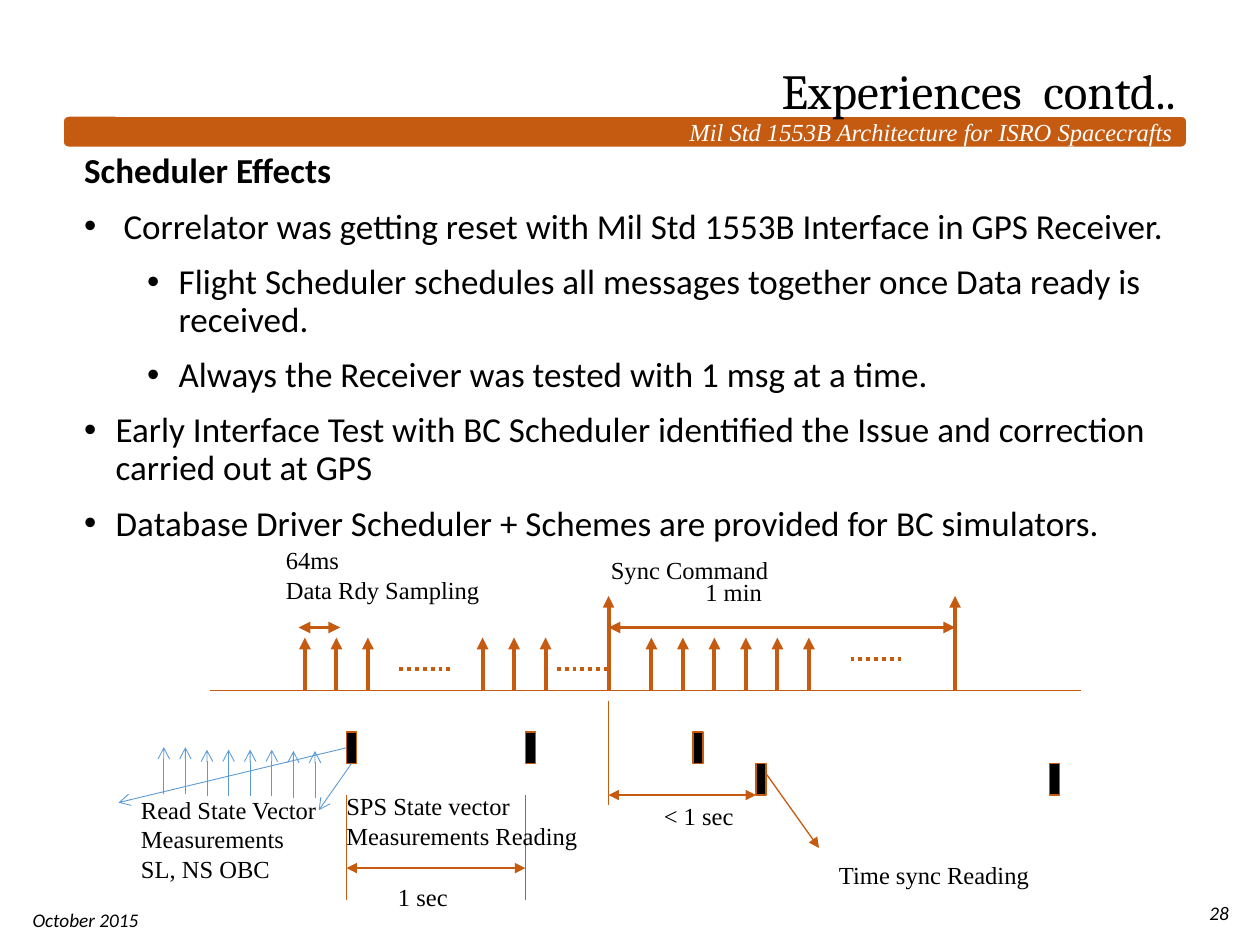
from lxml import etree
from pptx import Presentation
from pptx.dml.color import RGBColor
from pptx.enum.dml import MSO_LINE
from pptx.enum.shapes import MSO_CONNECTOR, MSO_SHAPE
from pptx.enum.text import MSO_ANCHOR, MSO_AUTO_SIZE, PP_ALIGN
from pptx.oxml.ns import qn
from pptx.util import Inches, Pt

STRAIGHT = MSO_CONNECTOR.STRAIGHT
RECTANGLE = MSO_SHAPE.RECTANGLE
ROUNDED = MSO_SHAPE.ROUNDED_RECTANGLE
DOTTED = MSO_LINE.ROUND_DOT
RIGHT = PP_ALIGN.RIGHT
MIDDLE = MSO_ANCHOR.MIDDLE
FIT_SHAPE = MSO_AUTO_SIZE.SHAPE_TO_FIT_TEXT

ORANGE = RGBColor(0xC5, 0x5A, 0x11)
BLUE = RGBColor(0x5B, 0x9B, 0xD5)
BLACK = RGBColor(0, 0, 0)
WHITE = RGBColor(0xFF, 0xFF, 0xFF)

AXIS_Y = 5.48
SYNC_X, NEXT_SYNC_X = 4.83, 7.58
READ_X, NEXT_READ_X = 2.75, 4.17

BODY = [
    (None, "Scheduler Effects"),
    (0, " Correlator was getting reset with Mil Std 1553B Interface in GPS Receiver."),
    (1, "Flight Scheduler schedules all messages together once Data ready is received."),
    (1, "Always the Receiver was tested with 1 msg at a time."),
    (0, "Early Interface Test with BC Scheduler identified the Issue and correction carried out at GPS"),
    (0, "Database Driver Scheduler + Schemes are provided for BC simulators."),
]

LABELS = [
    (2.17, 4.28, 1.75, 0.57, "64ms\nData Rdy Sampling"),
    (2.65, 6.23, 2.05, 0.57, "SPS State vector\nMeasurements Reading"),
    (4.75, 4.36, 1.46, 0.34, "Sync Command"),
    (6.56, 6.78, 1.79, 0.33, "Time sync Reading"),
    (3.06, 6.95, 0.65, 0.33, "1 sec"),
    (5.5, 4.53, 0.67, 0.33, "1 min"),
    (5.17, 6.31, 0.8, 0.33, "< 1 sec"),
    (1.02, 6.26, 1.61, 0.81, "Read State Vector\nMeasurements\nSL, NS OBC"),
]


def style_font(font, name, size, color=BLACK, bold=False, italic=False):
    """Set the look of a font."""
    font.name, font.size = name, Pt(size)
    font.bold, font.italic = bold, italic
    font.color.rgb = color


def add_label(slide, left, top, width, height, text, name="Times New Roman", size=14, italic=False):
    """Add a text box that fits its unwrapped lines."""
    label = slide.shapes.add_textbox(*map(Inches, (left, top, width, height)))
    frame = label.text_frame
    frame.text = text
    frame.word_wrap = False
    frame.auto_size = FIT_SHAPE
    for paragraph in frame.paragraphs:
        style_font(paragraph.font, name, size, italic=italic)


def add_line(slide, start, end, width=0.75, color=ORANGE, head=None, tail=None, dotted=False):
    """Add a straight line with optional arrowheads."""
    line = slide.shapes.add_connector(STRAIGHT, *map(Inches, (*start, *end)))
    line.line.color.rgb = color
    line.line.width = Pt(width)
    if dotted:
        line.line.dash_style = DOTTED
    outline = line.line._get_or_add_ln()
    for tag, kind in (("a:headEnd", head), ("a:tailEnd", tail)):
        if kind:
            etree.SubElement(outline, qn(tag), type=kind)
    etree.SubElement(line._element.spPr, qn("a:effectLst"))
    return line


def add_span(slide, left, right, y, width=0.75):
    """Add a horizontal double-headed interval arrow."""
    add_line(slide, (left, y), (right, y), width, head="triangle", tail="triangle")


def add_pulse(slide, x, top):
    """Add a thick arrow rising from the time axis."""
    add_line(slide, (x, AXIS_Y), (x, top), 2.25, tail="triangle")


def add_block(slide, geometry, left, top, width, height, fill, outline, outline_width):
    """Add a filled and outlined shape."""
    block = slide.shapes.add_shape(geometry, *map(Inches, (left, top, width, height)))
    block.shadow.inherit = False
    block.fill.solid()
    block.fill.fore_color.rgb = fill
    block.line.color.rgb = outline
    block.line.width = Pt(outline_width)
    return block


def add_message(slide, left, top):
    """Add a black bus message marker."""
    return add_block(slide, RECTANGLE, left, top, 0.08, 0.25, BLACK, ORANGE, 0.75)


def add_banner(slide):
    """Add the orange band with the deck title."""
    banner = add_block(slide, ROUNDED, 0.5, 0.92, 8.92, 0.25, ORANGE, WHITE, 1)
    banner.adjustments[0] = 0.17
    frame = banner.text_frame
    frame.text = "Mil Std 1553B Architecture for ISRO Spacecrafts"
    frame.word_wrap = True
    frame.vertical_anchor = MIDDLE
    frame.margin_top = frame.margin_bottom = Inches(0.02)
    frame.paragraphs[0].alignment = RIGHT
    style_font(frame.paragraphs[0].font, "Times New Roman", 14, WHITE, italic=True)


def add_title(slide):
    """Add the slide title."""
    title = slide.shapes.add_textbox(Inches(1.4), Inches(0), Inches(8.03), Inches(1.25))
    frame = title.text_frame
    frame.word_wrap = True
    frame.margin_top = Inches(0.53)
    frame.text = "Experiences  contd.."
    paragraph = frame.paragraphs[0]
    paragraph.alignment = RIGHT
    paragraph.line_spacing = 0.9
    style_font(paragraph.font, "Cambria", 28)


def add_body(slide):
    """Add the heading and its two-level bullet list."""
    body = slide.shapes.add_textbox(Inches(0.57), Inches(1.17), Inches(9.07), Inches(4.95))
    frame = body.text_frame
    frame.word_wrap = True
    frame.text = "\n".join(text for _, text in BODY)
    for index, (paragraph, (level, _)) in enumerate(zip(frame.paragraphs, BODY)):
        paragraph.level = level or 0
        paragraph.line_spacing = 0.9
        paragraph.space_before = Pt(10 if index else 0)
        properties = paragraph._p.get_or_add_pPr()
        properties.set("marL", str(Inches(0.25 + 0.5 * paragraph.level)))
        properties.set("indent", str(Inches(-0.25)))
        if level is not None:
            etree.SubElement(properties, qn("a:buFont"), typeface="Arial")
            etree.SubElement(properties, qn("a:buChar"), char="•")
        style_font(paragraph.font, "Calibri", 20, bold=level is None)


def add_timeline(slide):
    """Add the time axis with sampling pulses and sync commands."""
    add_line(slide, (1.67, AXIS_Y), (8.58, AXIS_Y))
    for first, count in ((2.42, 3), (3.83, 3), (5.17, 6)):
        for step in range(count):
            add_pulse(slide, first + 0.25 * step, 5.06)
    for x in (SYNC_X, NEXT_SYNC_X):
        add_pulse(slide, x, 4.73)
    add_span(slide, 2.37, 2.7, 4.98, 2.25)
    add_span(slide, SYNC_X, NEXT_SYNC_X, 4.98, 2.25)
    for left, y in ((3.17, 5.31), (4.42, 5.31), (6.75, 5.23)):
        add_line(slide, (left, y), (left + 0.41, y), 2.25, dotted=True)


def add_messages(slide):
    """Add the message markers, their intervals and callout arrows."""
    state_read = add_message(slide, READ_X, 5.81)
    for left, top in ((NEXT_READ_X, 5.81), (5.5, 5.81), (6, 6.06), (8.33, 6.06)):
        add_message(slide, left, top)
    for x, top in ((READ_X, 6.31), (NEXT_READ_X, 6.31), (SYNC_X, 5.56)):
        add_line(slide, (x, top), (x, top + 0.83))
    add_span(slide, READ_X, NEXT_READ_X, 6.89)
    add_span(slide, SYNC_X, 6, 6.31)
    add_line(slide, (6.08, 6.14), (6.5, 6.73), tail="triangle")
    for side, start, end in ((1, (2.75, 5.93), (0.94, 6.37)), (2, (2.79, 6.06), (2.53, 6.43))):
        callout = add_line(slide, start, end, 0.5, BLUE, tail="arrow")
        callout.begin_connect(state_read, side)
    for index, top in enumerate([5.93] * 2 + [5.95] * 4 + [5.96] * 2):
        x = 1.3 + index * 1.2 / 7
        add_line(slide, (x, top + 0.37), (x, top), 0.5, BLUE, tail="arrow")


def main():
    """Build and save the slide."""
    presentation = Presentation()
    presentation.slide_width, presentation.slide_height = Inches(10), Inches(7.5)
    slide = presentation.slides.add_slide(presentation.slide_layouts[6])
    add_banner(slide)
    add_label(slide, 0.16, 7.16, 1.05, 0.29, "October 2015", "Calibri", 11, True)
    add_label(slide, 9.5, 7.1, 0.38, 0.29, "28", "Calibri", 11, True)
    add_body(slide)
    add_timeline(slide)
    add_messages(slide)
    for label in LABELS:
        add_label(slide, *label)
    add_title(slide)
    presentation.save("out.pptx")


if __name__ == "__main__":
    main()
